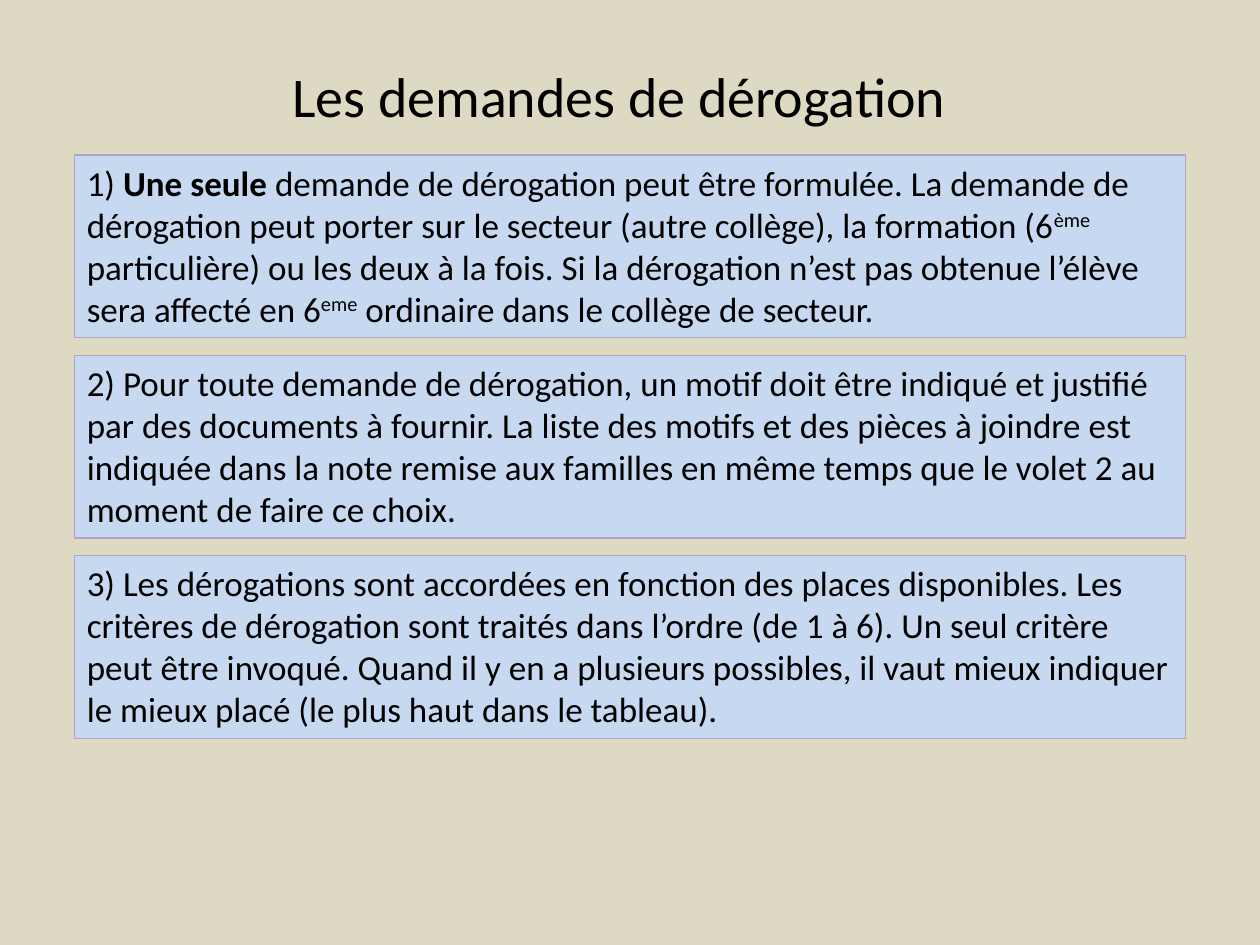
from pptx import Presentation
from pptx.dml.color import RGBColor
from pptx.enum import shapes, text
from pptx.util import Inches, Pt

TITLE = "Les demandes de dérogation"

# Each rule is a list of (wording, style) pieces.
RULES = [
    [
        ("1) ", "plain"),
        ("Une seule ", "bold"),
        ("demande de dérogation peut être formulée. La demande de dérogation "
         "peut porter sur le secteur (autre collège), la formation (6", "plain"),
        ("ème", "superscript"),
        (" particulière) ou les deux à la fois. Si la dérogation n’est pas "
         "obtenue l’élève sera affecté en 6", "plain"),
        ("eme", "superscript"),
        (" ordinaire dans le collège de secteur.", "plain"),
    ],
    [
        ("2) Pour toute demande de dérogation, un motif doit être indiqué et "
         "justifié par des documents à fournir. La liste des motifs et des "
         "pièces à joindre est indiquée dans la note remise aux familles en "
         "même temps que le volet 2 au moment de faire ce choix.", "plain"),
    ],
    [
        ("3) Les dérogations sont accordées en fonction des places "
         "disponibles. Les critères de dérogation sont traités dans l’ordre "
         "(de 1 à 6). Un seul critère peut être invoqué. Quand il y en a "
         "plusieurs possibles, il vaut mieux indiquer le mieux placé (le plus "
         "haut dans le tableau).", "plain"),
    ],
]

THEME = {
    "font": "Calibri",
    "title_size": Pt(32),
    "rule_size": Pt(20),
    "ink": RGBColor.from_string("000000"),
    "background": RGBColor.from_string("DDD9C3"),
    "fill": RGBColor.from_string("C6D9F1"),
    "line": RGBColor.from_string("B3A2C7"),
}

RULE_LEFT, RULE_TOP = 0.59, 1.23
RULE_WIDTH, RULE_HEIGHT, RULE_GAP = 8.82, 1.45, 0.14


def style_run(run, size):
    run.font.name = THEME["font"]
    run.font.size = size
    run.font.color.rgb = THEME["ink"]


def add_title(slide):
    title = slide.shapes.title
    title.left, title.top = Inches(1.85), Inches(0.44)
    title.width, title.height = Inches(6.13), Inches(0.63)
    frame = title.text_frame
    frame.text = TITLE
    frame.vertical_anchor = text.MSO_ANCHOR.TOP
    frame.auto_size = text.MSO_AUTO_SIZE.NONE
    heading = frame.paragraphs[0]
    heading.alignment = text.PP_ALIGN.CENTER
    style_run(heading.runs[0], THEME["title_size"])


def add_rule(slide, pieces, top):
    box = slide.shapes.add_shape(
        shapes.MSO_SHAPE.RECTANGLE, Inches(RULE_LEFT), Inches(top),
        Inches(RULE_WIDTH), Inches(RULE_HEIGHT))
    box.shadow.inherit = False
    box.fill.solid()
    box.fill.fore_color.rgb = THEME["fill"]
    box.line.color.rgb = THEME["line"]
    box.line.width = Pt(0.75)

    frame = box.text_frame
    frame.word_wrap = True
    frame.auto_size = text.MSO_AUTO_SIZE.SHAPE_TO_FIT_TEXT
    frame.vertical_anchor = text.MSO_ANCHOR.TOP
    paragraph = frame.paragraphs[0]
    paragraph.alignment = text.PP_ALIGN.LEFT
    for wording, style in pieces:
        run = paragraph.add_run()
        run.text = wording
        style_run(run, THEME["rule_size"])
        if style == "bold":
            run.font.bold = True
        elif style == "superscript":
            run.font._element.set("baseline", "30000")


def main():
    deck = Presentation()
    deck.slide_width, deck.slide_height = Inches(10), Inches(7.5)
    slide = deck.slides.add_slide(deck.slide_layouts.get_by_name("Title Only"))
    slide.background.fill.solid()
    slide.background.fill.fore_color.rgb = THEME["background"]

    add_title(slide)
    for index, pieces in enumerate(RULES):
        add_rule(slide, pieces, RULE_TOP + index * (RULE_HEIGHT + RULE_GAP))
    deck.save("out.pptx")


if __name__ == "__main__":
    main()
